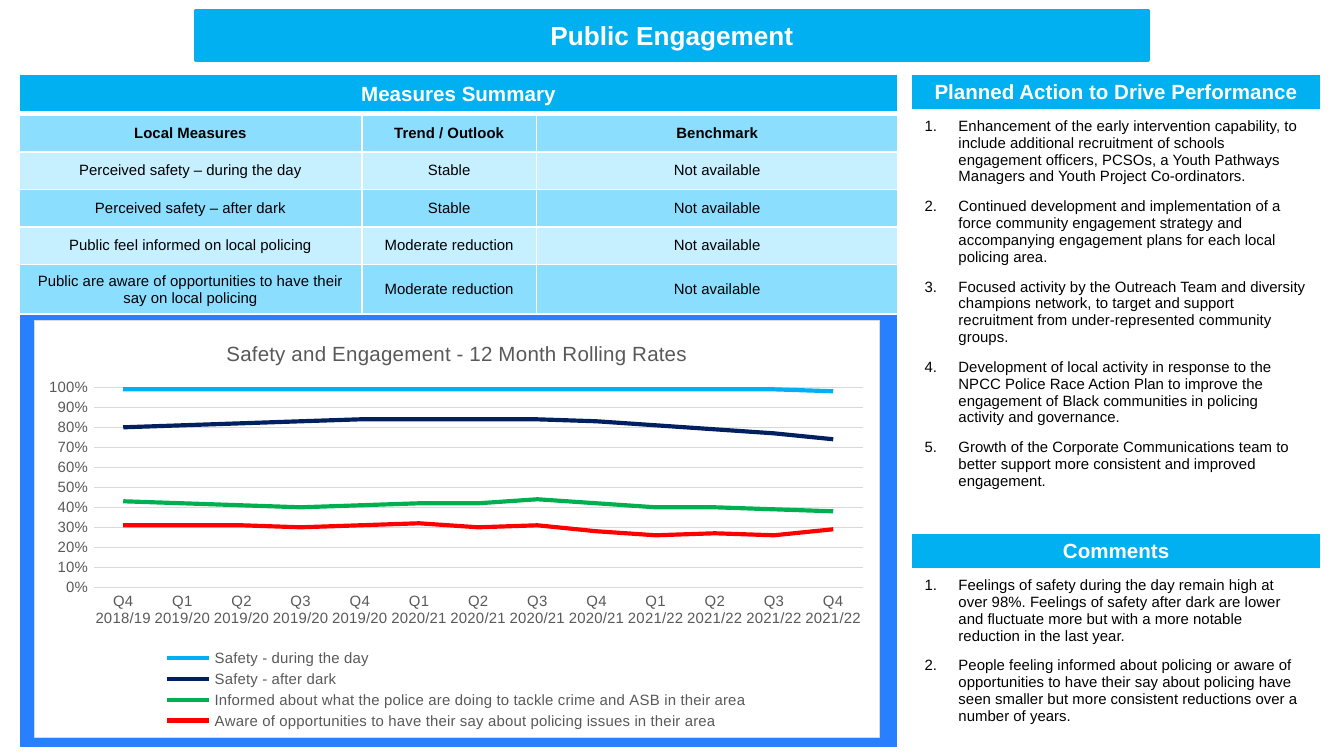
from lxml.etree import SubElement
from pptx import Presentation
from pptx.chart.data import CategoryChartData
from pptx.dml.color import RGBColor
from pptx.enum.chart import XL_CHART_TYPE as ChartType, XL_LEGEND_POSITION as LegendPosition
from pptx.enum.chart import XL_TICK_MARK as TickMark
from pptx.enum.text import MSO_ANCHOR as Anchor, MSO_AUTO_SIZE as AutoSize, PP_ALIGN as Align
from pptx.oxml import parse_xml
from pptx.oxml.ns import nsdecls, qn
from pptx.util import Cm, Pt

COLORS = {
    "sky": "00B0F0", "band": "8CDEFF", "pale": "C6EFFF", "blue": "287FFF",
    "navy": "002060", "green": "00B050", "red": "FF0000",
    "white": "FFFFFF", "black": "000000", "grey": "595959", "grid": "D9D9D9",
}
FONT = "Arial"

MEASURES = [
    ("Local Measures", "Trend / Outlook", "Benchmark"),
    ("Perceived safety – during the day", "Stable", "Not available"),
    ("Perceived safety – after dark", "Stable", "Not available"),
    ("Public feel informed on local policing", "Moderate reduction", "Not available"),
    ("Public are aware of opportunities to have their say on local policing",
     "Moderate reduction", "Not available"),
]
ACTIONS = [
    "Enhancement of the early intervention capability, to include additional recruitment of "
    "schools engagement officers, PCSOs, a Youth Pathways Managers and Youth Project Co-ordinators.",
    "Continued development and implementation of a force community engagement strategy and "
    "accompanying engagement plans for each local policing area.",
    "Focused activity by the Outreach Team and diversity champions network, to target and "
    "support recruitment from under-represented community groups.",
    "Development of local activity in response to the NPCC Police Race Action Plan to improve "
    "the engagement of Black communities in policing activity and governance.",
    "Growth of the Corporate Communications team to better support more consistent and "
    "improved engagement.",
]
COMMENTS = [
    "Feelings of safety during the day remain high at over 98%. Feelings of safety after dark "
    "are lower and fluctuate more but with a more notable reduction in the last year.",
    "People feeling informed about policing or aware of opportunities to have their say about "
    "policing have seen smaller but more consistent reductions over a number of years.",
]
QUARTERS = ["Q4 2018/19"] + [
    f"Q{quarter} {year}" for year in ("2019/20", "2020/21", "2021/22") for quarter in range(1, 5)
]
SERIES = [
    ("Safety - during the day", "sky", [99] * 12 + [98]),
    ("Safety - after dark", "navy", [80, 81, 82, 83, 84, 84, 84, 84, 83, 81, 79, 77, 74]),
    ("Informed about what the police are doing to tackle crime and ASB in their area", "green",
     [43, 42, 41, 40, 41, 42, 42, 44, 42, 40, 40, 39, 38]),
    ("Aware of opportunities to have their say about policing issues in their area", "red",
     [31, 31, 31, 30, 31, 32, 30, 31, 28, 26, 27, 26, 29]),
]


def rgb(name):
    return RGBColor.from_string(COLORS[name])


def set_font(font, size, color, bold=False):
    font.name, font.size, font.bold = FONT, Pt(size), bold
    font.color.rgb = rgb(color)


def style_cell(cell, fill=None, bottom=1):
    """White borders first, then the fill, as the schema orders them."""
    properties = cell._tc.get_or_add_tcPr()
    for side, width in (("L", 1), ("R", 1), ("T", 1), ("B", bottom)):
        line = SubElement(properties, qn(f"a:ln{side}"), w=str(Pt(width)))
        solid = SubElement(line, qn("a:solidFill"))
        SubElement(solid, qn("a:srgbClr"), val=COLORS["white"])
    if fill:
        cell.fill.solid()
        cell.fill.fore_color.rgb = rgb(fill)
    else:
        cell.fill.background()


def write_centred(cell, text, size, color, bold):
    cell.text = text
    cell.vertical_anchor = Anchor.MIDDLE
    paragraph = cell.text_frame.paragraphs[0]
    paragraph.alignment = Align.CENTER
    set_font(paragraph.font, size, color, bold)


def add_grid(slide, left, top, widths, heights):
    frame = slide.shapes.add_table(len(heights), len(widths), Cm(left), Cm(top),
                                   Cm(sum(widths)), Cm(sum(heights)))
    table = frame.table
    for column, width in zip(table.columns, widths):
        column.width = Cm(width)
    for row, height in zip(table.rows, heights):
        row.height = Cm(height)
    return table


def place_title(slide, left, top, width, height):
    title = slide.shapes.title
    title.left, title.top, title.width, title.height = Cm(left), Cm(top), Cm(width), Cm(height)
    title.fill.solid()
    title.fill.fore_color.rgb = rgb("sky")
    title.line.color.rgb = rgb("sky")
    title.line.width = Pt(2)
    frame = title.text_frame
    frame.text = "Public Engagement"
    frame.auto_size = AutoSize.NONE
    frame.vertical_anchor = Anchor.MIDDLE
    frame.margin_left = frame.margin_right = frame.margin_top = frame.margin_bottom = 0
    frame.paragraphs[0].alignment = Align.CENTER
    set_font(frame.paragraphs[0].font, 14, "white", True)


def add_measures(slide, left, top, widths, heights):
    table = add_grid(slide, left, top, widths, heights)
    last = len(heights) - 1
    # Heading and chart background span all columns
    for row, fill, bottom in ((0, "sky", 3), (last, "blue", 1)):
        table.cell(row, 0).merge(table.cell(row, len(widths) - 1))
        for column in range(len(widths)):
            style_cell(table.cell(row, column), fill, bottom)
    write_centred(table.cell(0, 0), "Measures Summary", 11, "white", True)
    for row, texts in enumerate(MEASURES, 1):
        for column, text in enumerate(texts):
            cell = table.cell(row, column)
            style_cell(cell, "band" if row % 2 else "pale")
            write_centred(cell, text, 8, "black", row == 1)


def add_numbered_panel(slide, heading, items, left, top, width, heights):
    table = add_grid(slide, left, top, [width], heights)
    header, body = table.cell(0, 0), table.cell(1, 0)
    style_cell(header, "sky", 3)
    write_centred(header, heading, 11, "white", True)
    style_cell(body)
    body.text = "\n".join(items)
    for index, paragraph in enumerate(body.text_frame.paragraphs):
        properties = paragraph._p.get_or_add_pPr()
        properties.set("marL", str(Cm(0.64)))
        properties.set("indent", str(-Cm(0.64)))
        SubElement(properties, qn("a:buFont"), typeface="+mj-lt")
        SubElement(properties, qn("a:buAutoNum"), type="arabicPeriod")
        if index:
            paragraph.space_before = Pt(7)
        set_font(paragraph.font, 8, "black")


def set_layout(parent, index, x, y, w, h, inner=False):
    """Fix the place of a chart part, in fractions of the chart."""
    for old in parent.findall(qn("c:layout")):
        parent.remove(old)
    layout = parse_xml(f"<c:layout {nsdecls('c')}><c:manualLayout/></c:layout>")
    if inner:
        SubElement(layout[0], qn("c:layoutTarget"), val="inner")
    for tag in ("xMode", "yMode"):
        SubElement(layout[0], qn(f"c:{tag}"), val="edge")
    for tag, value in (("x", x), ("y", y), ("w", w), ("h", h)):
        SubElement(layout[0], qn(f"c:{tag}"), val=str(value))
    parent.insert(index, layout)


def add_rates_chart(slide, left, top, width, height):
    data = CategoryChartData(number_format="0%")
    data.categories = QUARTERS
    for name, _, percents in SERIES:
        data.add_series(name, [percent / 100 for percent in percents])
    chart = slide.shapes.add_chart(ChartType.LINE, Cm(left), Cm(top), Cm(width), Cm(height),
                                   data).chart
    set_font(chart.font, 10, "black")
    chart.has_title = True
    chart.chart_title.include_in_layout = False
    title = chart.chart_title.text_frame
    title.text = "Safety and Engagement - 12 Month Rolling Rates"
    set_font(title.paragraphs[0].font, 11, "grey")

    # Lines
    chart.plots[0].vary_by_categories = False
    for series, (_, color, _) in zip(chart.plots[0].series, SERIES):
        series.smooth = False
        series.format.line.color.rgb = rgb(color)
        series.format.line.width = Pt(2.25)

    # Axes
    values, categories = chart.value_axis, chart.category_axis
    for axis in (values, categories):
        axis.major_tick_mark = axis.minor_tick_mark = TickMark.NONE
        set_font(axis.tick_labels.font, 8, "grey")
    values.minimum_scale, values.maximum_scale, values.major_unit = 0, 1, 0.1
    values.tick_labels.number_format = "0%"
    values.tick_labels.number_format_is_linked = False
    values.format.line.fill.background()
    for line in (values.major_gridlines.format.line, categories.format.line):
        line.color.rgb = rgb("grid")
        line.width = Pt(0.75)

    # Legend and plot position
    chart.has_legend = True
    chart.legend.position = LegendPosition.BOTTOM
    chart.legend.include_in_layout = False
    set_font(chart.legend.font, 8, "grey")
    space = chart.element
    set_layout(space.find(".//" + qn("c:plotArea")), 0, 0.07, 0.16, 0.91, 0.48, inner=True)
    set_layout(space.find(".//" + qn("c:legend")), 1, 0.15, 0.78, 0.7, 0.21)

    # Square white frame
    space.insert(1, parse_xml(f'<c:roundedCorners {nsdecls("c")} val="0"/>'))
    space.find(qn("c:chart")).addnext(parse_xml(
        f'<c:spPr {nsdecls("c", "a")}>'
        f'<a:solidFill><a:srgbClr val="{COLORS["white"]}"/></a:solidFill>'
        f'<a:ln w="{Pt(0.75)}"><a:solidFill><a:srgbClr val="{COLORS["grid"]}"/></a:solidFill>'
        '</a:ln></c:spPr>'))


def main():
    presentation = Presentation()
    presentation.slide_width, presentation.slide_height = Cm(25.4), Cm(14.29)
    slide = presentation.slides.add_slide(presentation.slide_layouts[5])
    place_title(slide, 3.71, 0.2, 17.98, 0.94)
    add_measures(slide, 0.36, 1.4, [6.48, 3.3, 6.83],
                 [0.75, 0.72, 0.71, 0.71, 0.71, 0.94, 8.19])
    add_numbered_panel(slide, "Planned Action to Drive Performance", ACTIONS,
                       17.22, 1.4, 7.75, [0.7, 7.72])
    add_numbered_panel(slide, "Comments", COMMENTS, 17.22, 10.08, 7.75, [0.7, 3.2])
    add_rates_chart(slide, 0.64, 6.05, 16, 7.9)
    presentation.save("out.pptx")


if __name__ == "__main__":
    main()
